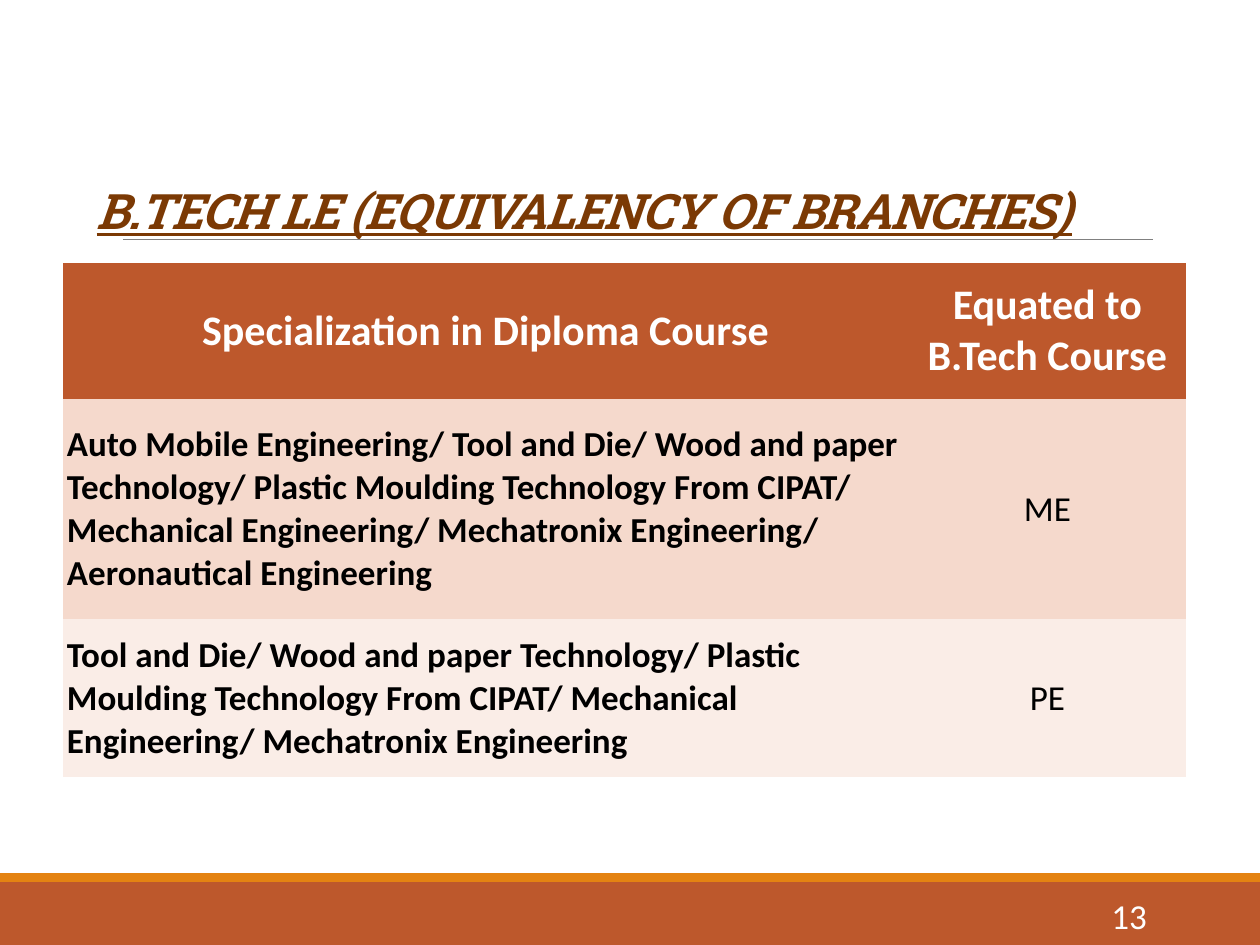
from pptx import Presentation
from pptx.dml.color import RGBColor
from pptx.enum.shapes import MSO_CONNECTOR, MSO_SHAPE
from pptx.enum.text import MSO_ANCHOR, MSO_AUTO_SIZE, PP_ALIGN
from pptx.oxml.ns import qn
from pptx.util import Pt
from lxml import etree

COLORS = {
    "rust": "BD582C",
    "orange": "E48312",
    "gray": "808080",
    "brown": "7B3904",
    "white": "FFFFFF",
    "black": "000000",
    "peach": "F5D9CC",
    "blush": "FAEDE7",
}
NO_STYLE = "{2D5ABB26-0587-4C30-8999-92F81FD0307C}"


def color(name):
    return RGBColor.from_string(COLORS[name])


def add_text(paragraph, text, size, color_name, bold=False, font="Calibri"):
    run = paragraph.add_run()
    run.text = text
    run.font.name = font
    run.font.size = Pt(size)
    run.font.bold = bold
    run.font.color.rgb = color(color_name)
    return run


presentation = Presentation()
presentation.slide_width = Pt(720)
presentation.slide_height = Pt(540)
slide = presentation.slides.add_slide(presentation.slide_layouts[5])

for top, height, fill in [(504, 36, "rust"), (499, 5, "orange")]:
    band = slide.shapes.add_shape(MSO_SHAPE.RECTANGLE, Pt(0), Pt(top), Pt(720), Pt(height))
    band.shadow.inherit = False
    band.fill.solid()
    band.fill.fore_color.rgb = color(fill)
    band.line.fill.background()

rule = slide.shapes.add_connector(MSO_CONNECTOR.STRAIGHT, Pt(70.5), Pt(136.8), Pt(659), Pt(136.8))
rule.line.color.rgb = color("gray")
rule.line.width = Pt(0.5)
etree.SubElement(rule._element.spPr, qn("a:effectLst"))

title = slide.shapes.title
title.left, title.top, title.width, title.height = Pt(48), Pt(106), Pt(624), Pt(58)
frame = title.text_frame
frame.word_wrap = True
frame.auto_size = MSO_AUTO_SIZE.NONE
frame.vertical_anchor = MSO_ANCHOR.BOTTOM
frame.margin_top, frame.margin_bottom = Pt(0), Pt(27)
paragraph = frame.paragraphs[0]
paragraph.alignment = PP_ALIGN.LEFT
paragraph.line_spacing = 0.85
run = add_text(paragraph, "B.TECH LE (EQUIVALENCY OF BRANCHES)", 27.9, "brown", True, "Roboto Slab")
run.font.italic = True
run.font.underline = True
run.font._element.set("spc", "-50")

rows = [
    (78, "rust", "white", 24, "Specialization in Diploma Course", "Equated to B.Tech Course"),
    (126, "peach", "black", 20,
     "Auto Mobile Engineering/ Tool and Die/ Wood and paper Technology/ "
     "Plastic Moulding Technology From CIPAT/ Mechanical Engineering/ "
     "Mechatronix Engineering/ Aeronautical Engineering", "ME"),
    (90, "blush", "black", 20,
     "Tool and Die/ Wood and paper Technology/ Plastic Moulding Technology "
     "From CIPAT/ Mechanical Engineering/ Mechatronix Engineering", "PE"),
]
table = slide.shapes.add_table(len(rows), 2, Pt(36), Pt(150), Pt(642), Pt(294)).table
table._tbl.tblPr.find(qn("a:tableStyleId")).text = NO_STYLE
table.columns[0].width = Pt(483)
table.columns[1].width = Pt(159)
for row_index, (height, fill, text_color, size, *texts) in enumerate(rows):
    table.rows[row_index].height = Pt(height)
    for column_index, text in enumerate(texts):
        cell = table.cell(row_index, column_index)
        cell.fill.solid()
        cell.fill.fore_color.rgb = color(fill)
        cell.vertical_anchor = MSO_ANCHOR.MIDDLE
        cell.margin_left = cell.margin_right = Pt(2.25)
        cell.margin_top = cell.margin_bottom = Pt(0)
        is_header, is_branch = row_index == 0, column_index == 1
        paragraph = cell.text_frame.paragraphs[0]
        paragraph.alignment = PP_ALIGN.CENTER if is_header or is_branch else PP_ALIGN.LEFT
        add_text(paragraph, text, size, text_color, is_header or not is_branch)

number_box = slide.shapes.add_textbox(Pt(584.5), Pt(508.5), Pt(78), Pt(29))
frame = number_box.text_frame
frame.word_wrap = True
frame.vertical_anchor = MSO_ANCHOR.MIDDLE
paragraph = frame.paragraphs[0]
paragraph.alignment = PP_ALIGN.RIGHT
add_text(paragraph, "13", 20, "white")

presentation.save("out.pptx")
